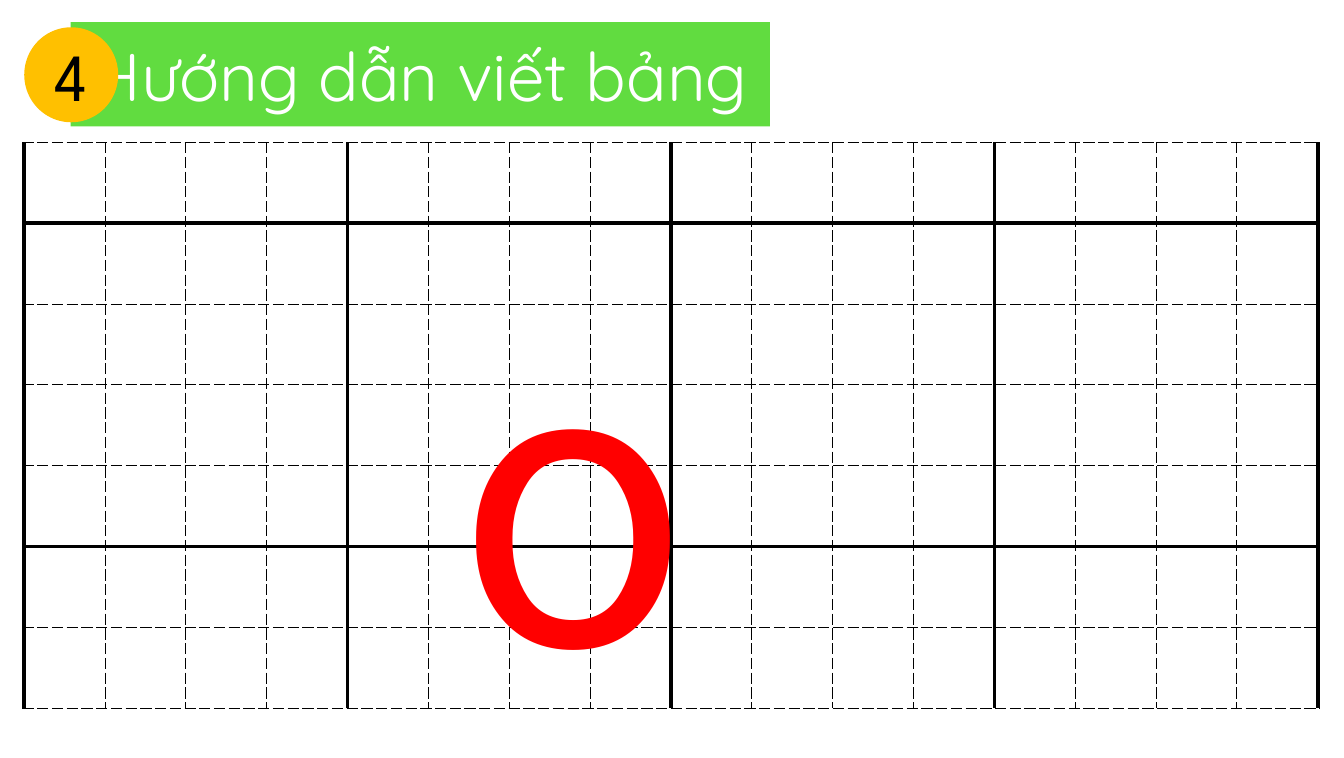
from lxml import etree
from pptx import Presentation
from pptx.dml.color import RGBColor
from pptx.enum.shapes import MSO_SHAPE as Shape
from pptx.enum.text import MSO_ANCHOR as Anchor, MSO_AUTO_SIZE as AutoSize, PP_ALIGN as Align
from pptx.oxml import parse_xml
from pptx.oxml.ns import nsdecls, qn
from pptx.util import Inches, Pt

BLACK = RGBColor(0x00, 0x00, 0x00)
WHITE = RGBColor(0xFF, 0xFF, 0xFF)
GREEN = RGBColor(0x61, 0xDC, 0x40)
AMBER = RGBColor(0xFF, 0xC0, 0x00)
RED = RGBColor(0xFF, 0x00, 0x00)

ROWS, COLUMNS = 7, 16
BOLD_EVERY = 4             # a bold vertical line every four squares
BOLD_ROW_LINES = (1, 5)    # bold horizontal lines, counted from the top
BOLD, DASHED, HAIRLINE = 3, 0.75, 0.25


def write_text(shape, text, font_name, size, color):
    frame = shape.text_frame
    frame.word_wrap = True
    frame.vertical_anchor = Anchor.MIDDLE
    para = frame.paragraphs[0]
    para.alignment = Align.CENTER
    span = para.add_run()
    span.text = text
    span.font.name = font_name
    span.font.size = Pt(size)
    span.font.color.rgb = color
    return frame


def column_line(line):
    return BOLD if line % BOLD_EVERY == 0 else DASHED


def row_line(line):
    if line in BOLD_ROW_LINES:
        return BOLD
    return HAIRLINE if line == ROWS else DASHED


def set_borders(cell, widths):
    """Draw left, right, top and bottom borders ahead of the cell's fill."""
    properties = cell._tc.get_or_add_tcPr()
    for position, (side, width) in enumerate(zip("LRTB", widths)):
        border = parse_xml(f'<a:ln{side} {nsdecls("a")} w="{Pt(width)}"/>')
        fill = etree.SubElement(border, qn("a:solidFill"))
        etree.SubElement(fill, qn("a:srgbClr"), val=str(BLACK))
        dash = "solid" if width == BOLD else "sysDash"
        etree.SubElement(border, qn("a:prstDash"), val=dash)
        properties.insert(position, border)


def add_writing_grid(page, left, top, width, height):
    table = page.shapes.add_table(ROWS, COLUMNS, Inches(left), Inches(top),
                                  Inches(width), Inches(height)).table
    table.first_row = False
    table.horz_banding = False
    for column in table.columns:
        column.width = Inches(width / COLUMNS)
    for row_index, row in enumerate(table.rows):
        row.height = Inches(height / ROWS)
        for column_index, cell in enumerate(row.cells):
            cell.fill.background()
            set_borders(cell, (column_line(column_index), column_line(column_index + 1),
                               row_line(row_index), row_line(row_index + 1)))


def add_sample_letter(page, left, top, width, height):
    box = page.shapes.add_textbox(Inches(left), Inches(top), Inches(width), Inches(height))
    frame = write_text(box, "o", "Roboto", 287, RED)
    frame.vertical_anchor = Anchor.TOP
    frame.margin_left = frame.margin_right = Inches(0.13)
    frame.margin_top = frame.margin_bottom = Inches(0.07)


def add_heading(page, left, top, width, height):
    # Green banner, held by the title placeholder
    banner = page.shapes.title
    banner.left, banner.top = Inches(left + 0.46), Inches(top)
    banner.width, banner.height = Inches(width - 0.46), Inches(height)
    banner._element.spPr.append(
        parse_xml(f'<a:prstGeom {nsdecls("a")} prst="roundRect"><a:avLst/></a:prstGeom>'))
    banner.fill.solid()
    banner.fill.fore_color.rgb = GREEN
    frame = write_text(banner, "Hướng dẫn viết bảng", "Quicksand", 48, WHITE)
    frame.auto_size = AutoSize.NONE

    # Numbered badge over the banner's left end
    badge = page.shapes.add_shape(Shape.OVAL, Inches(left), Inches(top + 0.05),
                                  Inches(0.93), Inches(0.94))
    badge.shadow.inherit = False
    badge.fill.solid()
    badge.fill.fore_color.rgb = AMBER
    badge.line.fill.background()
    write_text(badge, "4", "League Spartan", 48, BLACK)


def main():
    deck = Presentation()
    deck.slide_width, deck.slide_height = Inches(13.3), Inches(7.5)
    page = deck.slides.add_slide(deck.slide_layouts[5])
    add_writing_grid(page, 0.24, 1.41, 12.8, 5.6)
    add_sample_letter(page, 2.97, 2.34, 5.4, 5.01)
    add_heading(page, 0.24, 0.22, 7.38, 1.03)
    deck.save("out.pptx")


if __name__ == "__main__":
    main()
